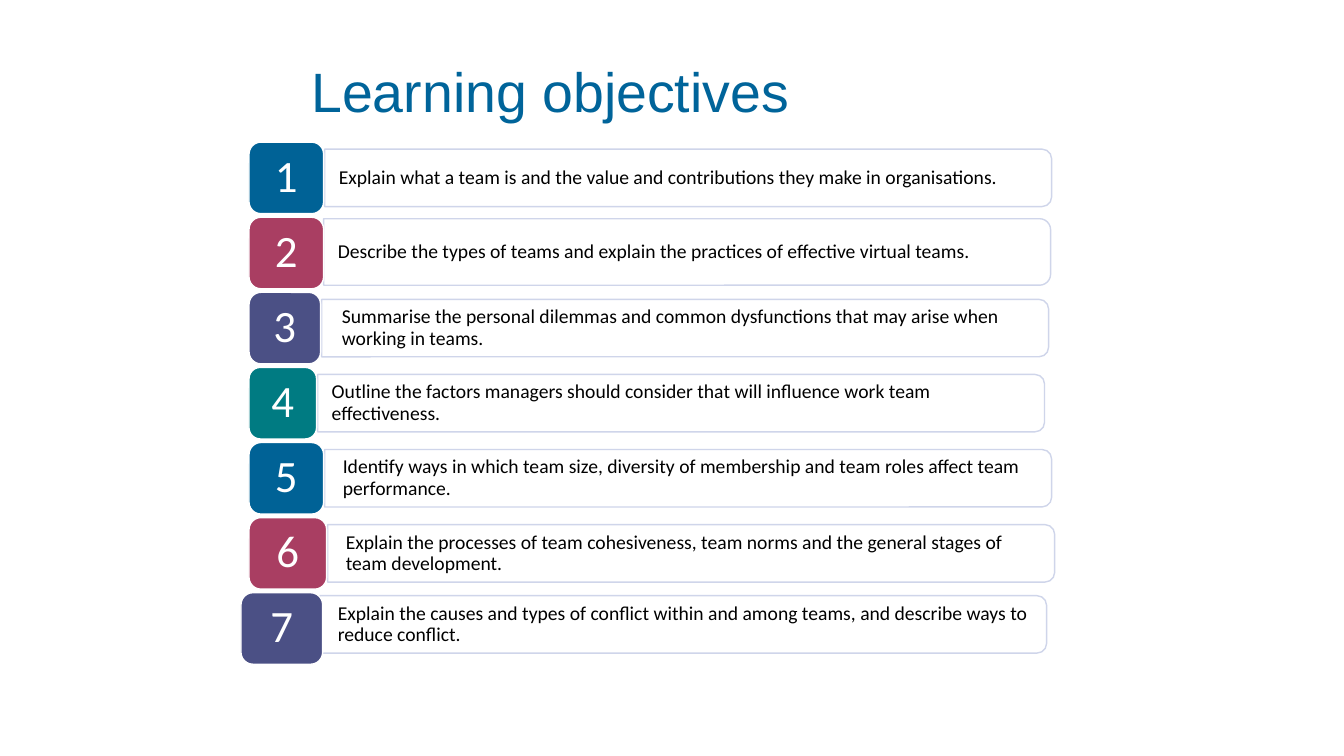
from pptx import Presentation
from pptx.dml.color import RGBColor
from pptx.enum.shapes import MSO_SHAPE
from pptx.enum.text import MSO_ANCHOR, PP_ALIGN
from pptx.util import Inches, Pt

TILE = MSO_SHAPE.ROUNDED_RECTANGLE
PANEL = MSO_SHAPE.ROUND_2_SAME_RECTANGLE
MIDDLE, BOTTOM = MSO_ANCHOR.MIDDLE, MSO_ANCHOR.BOTTOM
LEFT, CENTER = PP_ALIGN.LEFT, PP_ALIGN.CENTER

COLORS = ["006296", "A93E62", "4B5085", "007B82"]
TOP, PITCH, TILE_H = 1.41, 0.745, 0.71
PANEL_W = 7.21

# tile left, tile width, panel left, panel height, panel shift, text inset, goal
GOALS = [
    (2.47, 0.74, 3.22, 0.57, 0, 0.14,
     "Explain what a team is and the value and contributions they make in organisations."),
    (2.47, 0.74, 3.21, 0.66, -0.01, 0.14,
     "Describe the types of teams and explain the practices of effective virtual teams."),
    (2.47, 0.71, 3.19, 0.57, 0, 0.2,
     "Summarise the personal dilemmas and common dysfunctions that may arise when working in teams."),
    (2.47, 0.67, 3.15, 0.57, 0, 0.14,
     "Outline the factors managers should consider that will influence work team effectiveness."),
    (2.47, 0.74, 3.22, 0.57, 0, 0.18,
     "Identify ways in which team size, diversity of membership and team roles affect team performance."),
    (2.47, 0.77, 3.25, 0.57, 0, 0.18,
     "Explain the processes of team cohesiveness, team norms and the general stages of team development."),
    (2.39, 0.81, 3.17, 0.57, -0.04, 0.18,
     "Explain the causes and types of conflict within and among teams, and describe ways to reduce conflict."),
]


def rgb(code):
    return RGBColor.from_string(code)


def write(shape, text, font, size, color, align=LEFT, anchor=MIDDLE, inset=0.1):
    frame = shape.text_frame
    frame.word_wrap = True
    frame.vertical_anchor = anchor
    frame.margin_left, frame.margin_right = Inches(inset), Inches(0.1)
    frame.margin_top = frame.margin_bottom = Inches(0.05)
    para = frame.paragraphs[0]
    para.text = text
    para.alignment = align
    para.line_spacing = 0.9
    para.font.name, para.font.size = font, Pt(size)
    para.font.color.rgb = rgb(color)


def add_text(slide, box, text, *args, **style):
    shape = slide.shapes.add_textbox(*map(Inches, box))
    write(shape, text, *args, **style)


def add_block(slide, kind, box, fill, line):
    shape = slide.shapes.add_shape(kind, *map(Inches, box))
    shape.shadow.inherit = False
    shape.fill.solid()
    shape.fill.fore_color.rgb = rgb(fill)
    shape.line.color.rgb = rgb(line)
    shape.line.width = Pt(1)
    return shape


def add_panel(slide, left, top, width, height):
    """Draw the panel upright, then turn it so its round corners face right."""
    box = (left + (width - height) / 2, top + (height - width) / 2, height, width)
    add_block(slide, PANEL, box, "FFFFFF", "CFD5EA").rotation = 90


def add_goal(slide, top, number, goal):
    tile_x, tile_w, left, height, shift, inset, text = goal
    box = (left, top + (TILE_H - height) / 2 + shift, PANEL_W, height)
    add_panel(slide, *box)
    add_text(slide, box, text, "Calibri", 14, "000000", inset=inset)
    color = COLORS[(number - 1) % len(COLORS)] if number < 5 else COLORS[number - 5]
    tile = add_block(slide, TILE, (tile_x, top, tile_w, TILE_H), color, "FFFFFF")
    write(tile, str(number), "Calibri", 32, "FFFFFF", align=CENTER)


def main():
    deck = Presentation()
    deck.slide_width, deck.slide_height = Inches(13.33), Inches(7.5)
    slide = deck.slides.add_slide(deck.slide_layouts[6])
    for index, goal in enumerate(GOALS):
        add_goal(slide, TOP + index * PITCH, index + 1, goal)
    add_text(slide, (2.99, 0.65, 8.3, 0.63), "Learning objectives",
             "Arial", 39.6, "00649A", anchor=BOTTOM)
    deck.save("out.pptx")


if __name__ == "__main__":
    main()
